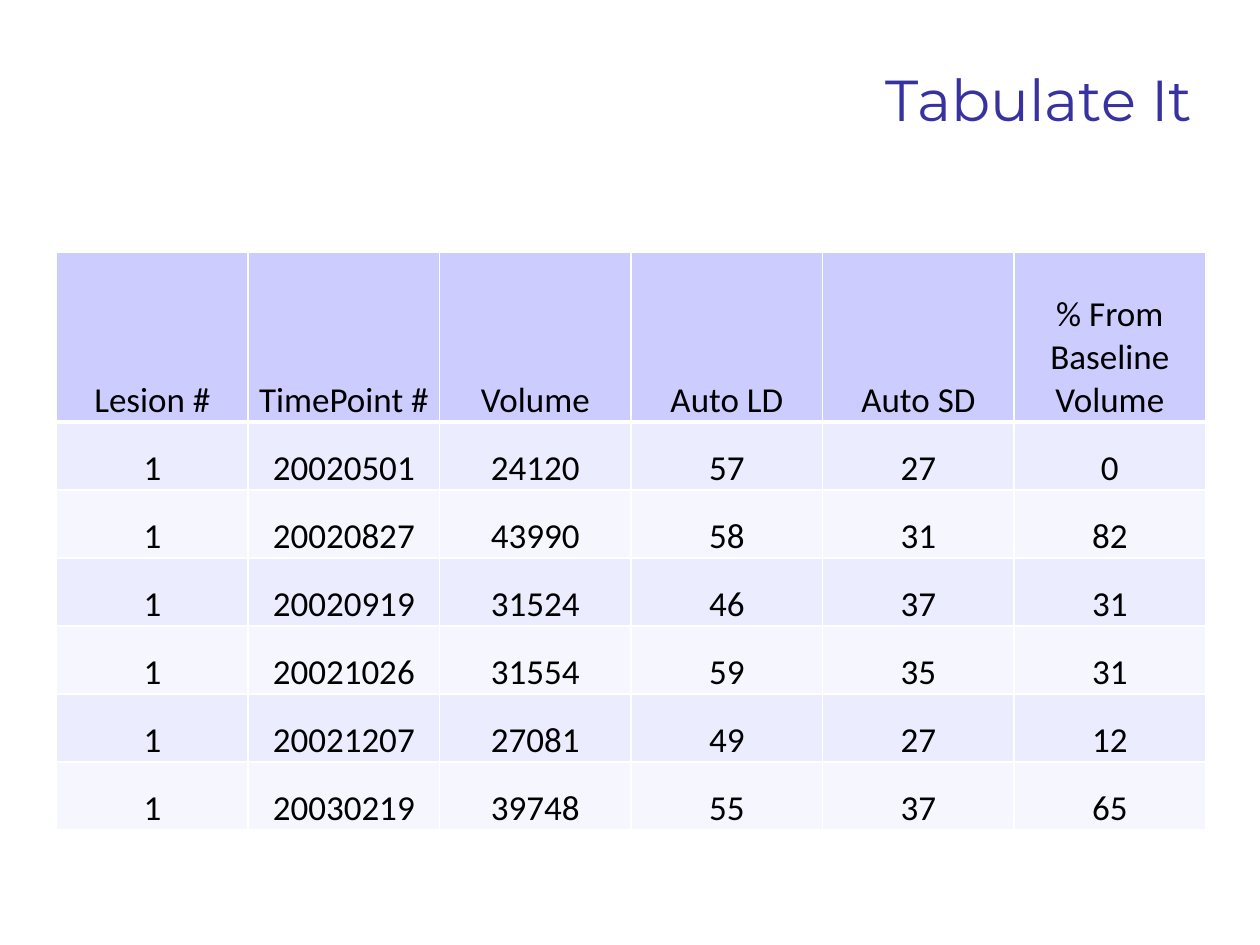
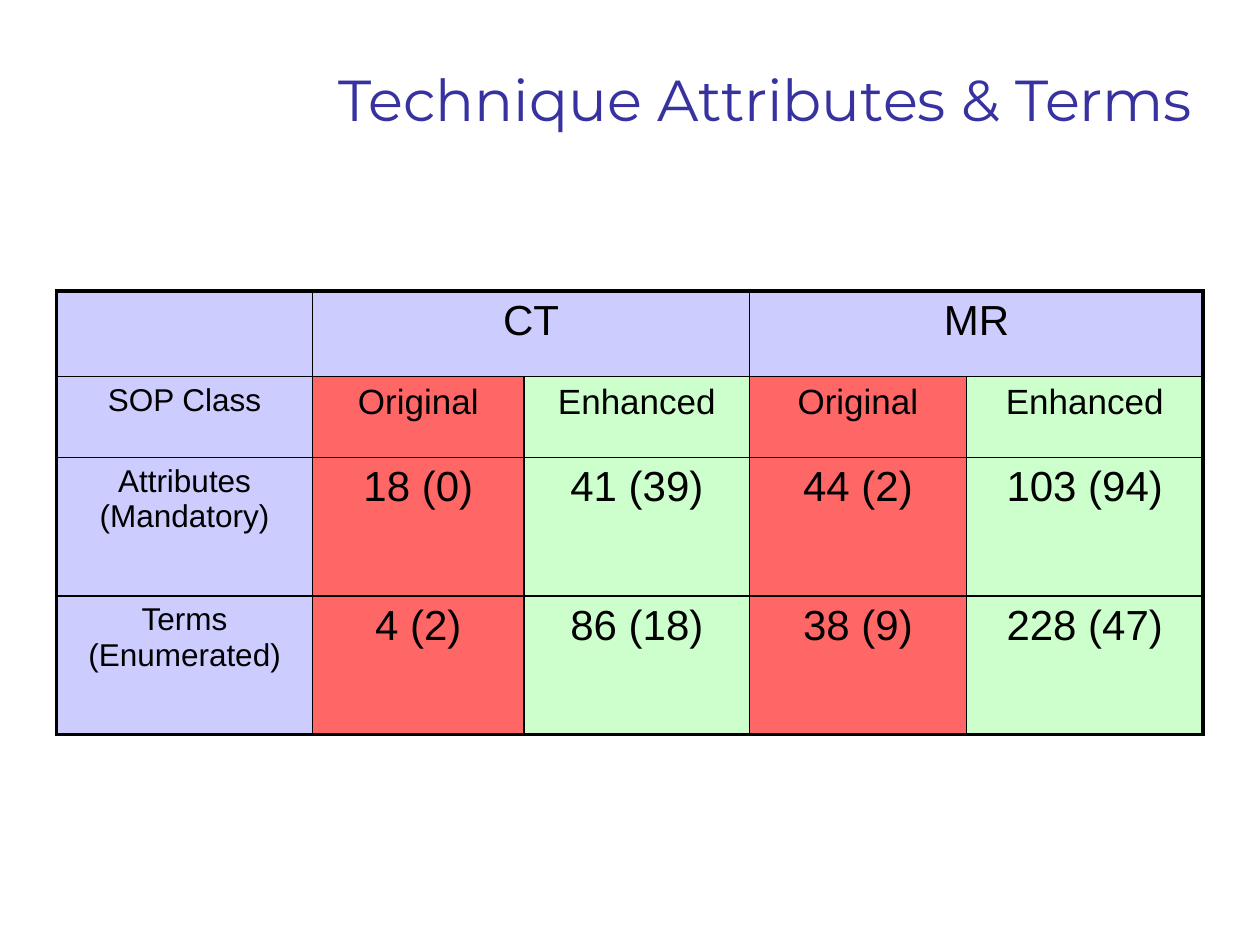
from lxml import etree
from pptx import Presentation
from pptx.dml.color import RGBColor
from pptx.enum.text import MSO_ANCHOR, PP_ALIGN
from pptx.oxml.ns import qn
from pptx.util import Pt

PX = 9144  # 100 px to the inch
TOP, BOTTOM = MSO_ANCHOR.TOP, MSO_ANCHOR.BOTTOM
CENTER, RIGHT = PP_ALIGN.CENTER, PP_ALIGN.RIGHT

INDIGO = RGBColor(0x37, 0x32, 0xA0)
BLACK = RGBColor(0x00, 0x00, 0x00)
WHITE = RGBColor(0xFF, 0xFF, 0xFF)
LAVENDER = RGBColor(0xCC, 0xCC, 0xFF)
PALE = RGBColor(0xEC, 0xEC, 0xFF)
PALEST = RGBColor(0xF6, 0xF6, 0xFF)
RED = RGBColor(0xFF, 0x66, 0x66)
GREEN = RGBColor(0xCC, 0xFF, 0xCC)

TABLE_LEFT = 45
MARGIN_SIDES = ("margin_left", "margin_top", "margin_right", "margin_bottom")


def add_slide_with_table(title, top, column_widths, row_heights):
    """Add a titled slide and return its table, free of style options."""
    slide = presentation.slides.add_slide(presentation.slide_layouts[6])
    title_box = slide.shapes.add_textbox(162 * PX, 32 * PX, 794 * PX, 77 * PX)
    frame = title_box.text_frame
    frame.word_wrap = True
    frame.vertical_anchor = BOTTOM
    frame.margin_bottom = 3 * PX
    paragraph = frame.paragraphs[0]
    paragraph.text = title
    paragraph.alignment = RIGHT
    for name, value in {"name": "Montserrat", "size": Pt(33)}.items():
        setattr(paragraph.font, name, value)
    paragraph.font.color.rgb = INDIGO

    table = slide.shapes.add_table(
        len(row_heights), len(column_widths), TABLE_LEFT * PX, top * PX,
        sum(column_widths) * PX, sum(row_heights) * PX).table
    table.first_row = table.horz_banding = False
    for column, width in zip(table.columns, column_widths):
        column.width = width * PX
    for row, height in zip(table.rows, row_heights):
        row.height = height * PX
    return table


def format_cell(cell, text, font, size, fill, anchor, margins, line_color, line_widths):
    """Write and format one cell; line widths run left, right, top, bottom in points."""
    cell.vertical_anchor = anchor
    for side, margin in zip(MARGIN_SIDES, margins):
        setattr(cell, side, margin * PX)
    paragraph = cell.text_frame.paragraphs[0]
    paragraph.text = text
    paragraph.alignment = CENTER
    for name, value in {"name": font, "size": Pt(size), "bold": False}.items():
        setattr(paragraph.font, name, value)
    paragraph.font.color.rgb = BLACK
    properties = cell._tc.get_or_add_tcPr()
    for side, width in zip("LRTB", line_widths):
        line = etree.SubElement(properties, qn(f"a:ln{side}"), w=str(Pt(width)))
        line_fill = etree.SubElement(line, qn("a:solidFill"))
        etree.SubElement(line_fill, qn("a:srgbClr"), val=str(line_color))
    cell.fill.solid()
    cell.fill.fore_color.rgb = fill


presentation = Presentation()
presentation.slide_width = 1000 * PX
presentation.slide_height = 750 * PX

# Lesion measurements
lesion_rows = [
    ("Lesion #", "TimePoint #", "Volume", "Auto LD", "Auto SD", "% From Baseline Volume"),
    ("1", "20020501", "24120", "57", "27", "0"),
    ("1", "20020827", "43990", "58", "31", "82"),
    ("1", "20020919", "31524", "46", "37", "31"),
    ("1", "20021026", "31554", "59", "35", "31"),
    ("1", "20021207", "27081", "49", "27", "12"),
    ("1", "20030219", "39748", "55", "37", "65"),
]
lesion_table = add_slide_with_table("Tabulate It", 200, [152] * 6, [135] + [54] * 6)
for row_index, values in enumerate(lesion_rows):
    if row_index == 0:
        fill, bottom_width = LAVENDER, 3
    else:
        fill, bottom_width = (PALE if row_index % 2 else PALEST), 1
    for column_index, text in enumerate(values):
        format_cell(lesion_table.cell(row_index, column_index), text, "Calibri", 20, fill,
                    BOTTOM, (1, 2, 1, 0), WHITE, (1, 1, 1, bottom_width))

# Technique attributes and terms
THICK, THIN = 2.25, 1
technique_rows = [
    ("", "CT", "", "MR", ""),
    ("SOP Class", "Original", "Enhanced", "Original", "Enhanced"),
    ("Attributes (Mandatory)", "18 (0)", "41 (39)", "44 (2)", "103 (94)"),
    ("Terms (Enumerated)", "4 (2)", "86 (18)", "38 (9)", "228 (47)"),
]
value_sizes = (24, 20, 24, 24)
column_fills = (LAVENDER, RED, GREEN, RED, GREEN)
technique_table = add_slide_with_table(
    "Technique Attributes & Terms", 231, [203, 168, 179, 172, 188], [68, 64, 110, 110])
for first_column in (1, 3):
    technique_table.cell(0, first_column).merge(technique_table.cell(0, first_column + 1))
last_row, last_column = len(technique_rows) - 1, len(column_fills) - 1
for row_index, values in enumerate(technique_rows):
    for column_index, text in enumerate(values):
        cell = technique_table.cell(row_index, column_index)
        end_column = column_index + (cell.span_width - 1 if cell.is_merge_origin else 0)
        line_widths = [THICK if outer else THIN for outer in (
            column_index == 0, end_column == last_column,
            row_index == 0, row_index == last_row)]
        format_cell(cell, text, "Arial", value_sizes[row_index] if column_index else 18,
                    column_fills[column_index] if row_index else LAVENDER,
                    TOP, (11, 5, 11, 5), BLACK, line_widths)

presentation.save("out.pptx")
